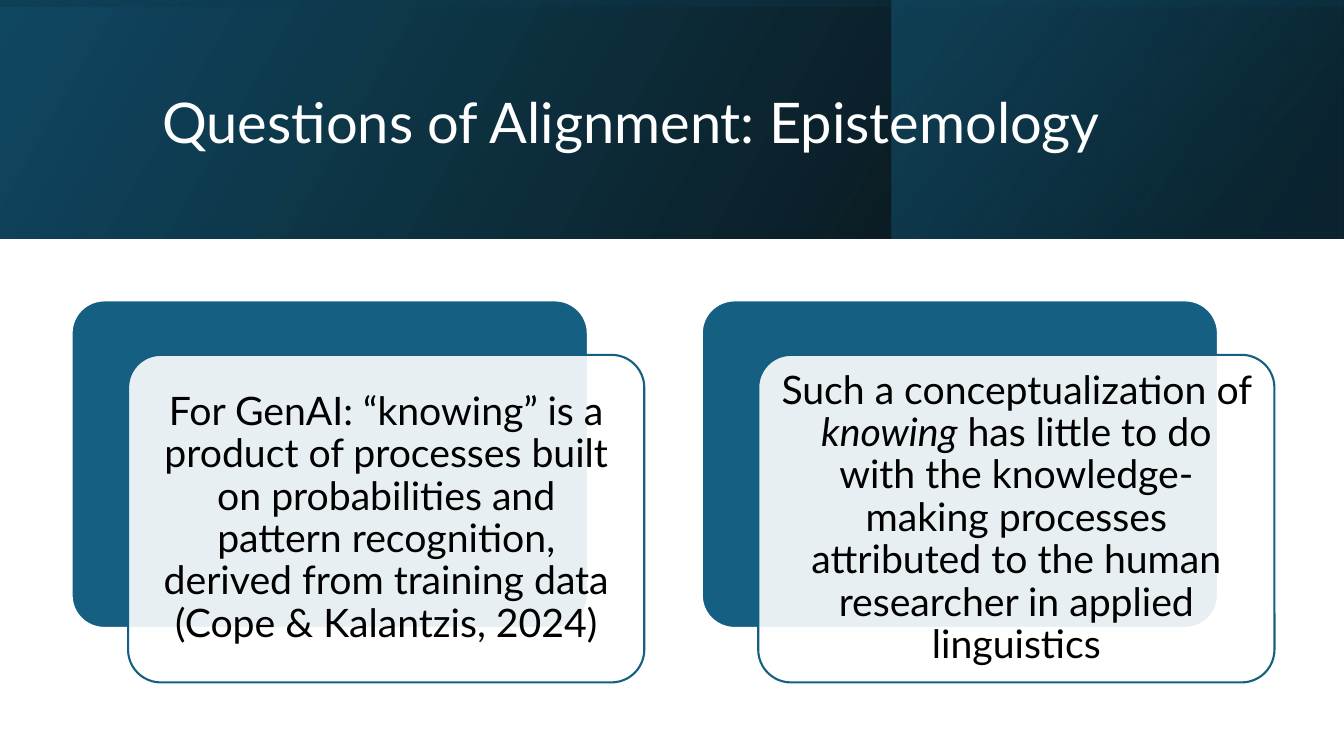
from lxml import etree
from pptx import Presentation
from pptx.dml.color import RGBColor
from pptx.enum import shapes, text
from pptx.oxml.ns import qn
from pptx.util import Inches, Pt

FONT = "Lato"
COLORS = {
    "white": "FFFFFF",
    "black": "000000",
    "teal": "156082",
    "deep": "104862",
    "navy": "0B3041",
}
BANDS = [
    ((0, 0, 13.33, 2.37), 0, 330, [(0, "black", 96), (100, "deep", 100 - 4 + 0)]),
    ((8.84, 0, 4.48, 2.37), 0, 320, [(19, "navy", 68), (100, "teal", 48)]),
    ((5.48, -5.48, 2.37, 13.33), 270, 350, [(23, "deep", 16), (99, "black", 45)]),
]
BANDS[0] = (*BANDS[0][:3], [(0, "black", 96), (100, "deep", 100)])
CARDS = [
    [("For GenAI: “knowing” is a product of processes built on probabilities "
      "and pattern recognition, derived from training data (Cope & Kalantzis, 2024)", False)],
    [("Such a conceptualization of ", False), ("knowing", True),
     (" has little to do with the knowledge-making processes attributed to the "
      "human researcher in applied linguistics", False)],
]
CARD_LEFT, CARD_TOP, CARD_STEP = 0.71, 2.98, 6.25
CARD_W, CARD_H = 5.12, 3.25
OFFSET_X, OFFSET_Y, INSET = 0.56, 0.54, 0.1


def rgb(name):
    return RGBColor.from_string(COLORS[name])


def add_alpha(color, percent):
    etree.SubElement(color, qn("a:alpha"), val=str(percent * 1000))


def style_run(r, size, color, italic=False):
    r.font.name = FONT
    r.font.size = Pt(size)
    r.font.color.rgb = rgb(color)
    r.font.italic = italic


def add_band(s, box, rotation, angle, stops):
    sp = s.shapes.add_shape(shapes.MSO_SHAPE.RECTANGLE, *map(Inches, box))
    sp.shadow.inherit = False
    sp.line.fill.background()
    sp.rotation = rotation
    sp.fill.gradient()
    spPr = sp._element.spPr
    spPr.find(qn("a:xfrm")).set("flipH", "1")
    grad = spPr.find(qn("a:gradFill"))
    grad.find(qn("a:lin")).set("ang", str(angle * 60000))
    stop_list = grad.find(qn("a:gsLst"))
    for stop in list(stop_list):
        stop_list.remove(stop)
    for position, color, opacity in stops:
        stop = etree.SubElement(stop_list, qn("a:gs"), pos=str(position * 1000))
        add_alpha(etree.SubElement(stop, qn("a:srgbClr"), val=COLORS[color]), opacity)


def add_title(s, title):
    sp = s.shapes.title
    sp.left, sp.top, sp.width, sp.height = map(Inches, (1.51, 0.38, 10.63, 1.72))
    s.shapes._spTree.append(sp._element)
    tf = sp.text_frame
    tf.text = title
    tf.auto_size = text.MSO_AUTO_SIZE.NONE
    tf.vertical_anchor = text.MSO_ANCHOR.MIDDLE
    p = tf.paragraphs[0]
    p.alignment = text.PP_ALIGN.LEFT
    p.line_spacing = 0.9
    style_run(p.runs[0], 40, "white")


def add_panel(s, left, top, fill, line, opacity=100):
    sp = s.shapes.add_shape(shapes.MSO_SHAPE.ROUNDED_RECTANGLE, Inches(left), Inches(top),
                            Inches(CARD_W), Inches(CARD_H))
    sp.adjustments[0] = 0.1
    sp.shadow.inherit = False
    sp.fill.solid()
    sp.fill.fore_color.rgb = rgb(fill)
    if opacity < 100:
        add_alpha(sp._element.spPr.find(qn("a:solidFill"))[0], opacity)
    sp.line.color.rgb = rgb(line)
    sp.line.width = Pt(1.5)


def add_card_text(s, left, top, runs):
    sp = s.shapes.add_textbox(Inches(left), Inches(top),
                              Inches(CARD_W - 2 * INSET), Inches(CARD_H - 2 * INSET))
    tf = sp.text_frame
    tf.word_wrap = True
    tf.vertical_anchor = text.MSO_ANCHOR.MIDDLE
    tf.margin_left = tf.margin_right = tf.margin_top = tf.margin_bottom = Inches(0.12)
    p = tf.paragraphs[0]
    p.alignment = text.PP_ALIGN.CENTER
    p.line_spacing = 0.9
    for words, italic in runs:
        r = p.add_run()
        r.text = words
        style_run(r, 28, "black", italic)


def add_card(s, left, runs):
    front_left, front_top = left + OFFSET_X, CARD_TOP + OFFSET_Y
    add_panel(s, left, CARD_TOP, "teal", "white")
    add_panel(s, front_left, front_top, "white", "teal", 90)
    add_card_text(s, front_left + INSET, front_top + INSET, runs)


def main():
    prs = Presentation()
    prs.slide_width, prs.slide_height = Inches(13.33), Inches(7.5)
    s = prs.slides.add_slide(prs.slide_layouts[5])
    for band in BANDS:
        add_band(s, *band)
    add_title(s, "Questions of Alignment: Epistemology")
    for i, runs in enumerate(CARDS):
        add_card(s, CARD_LEFT + i * CARD_STEP, runs)
    prs.save("out.pptx")


if __name__ == "__main__":
    main()
